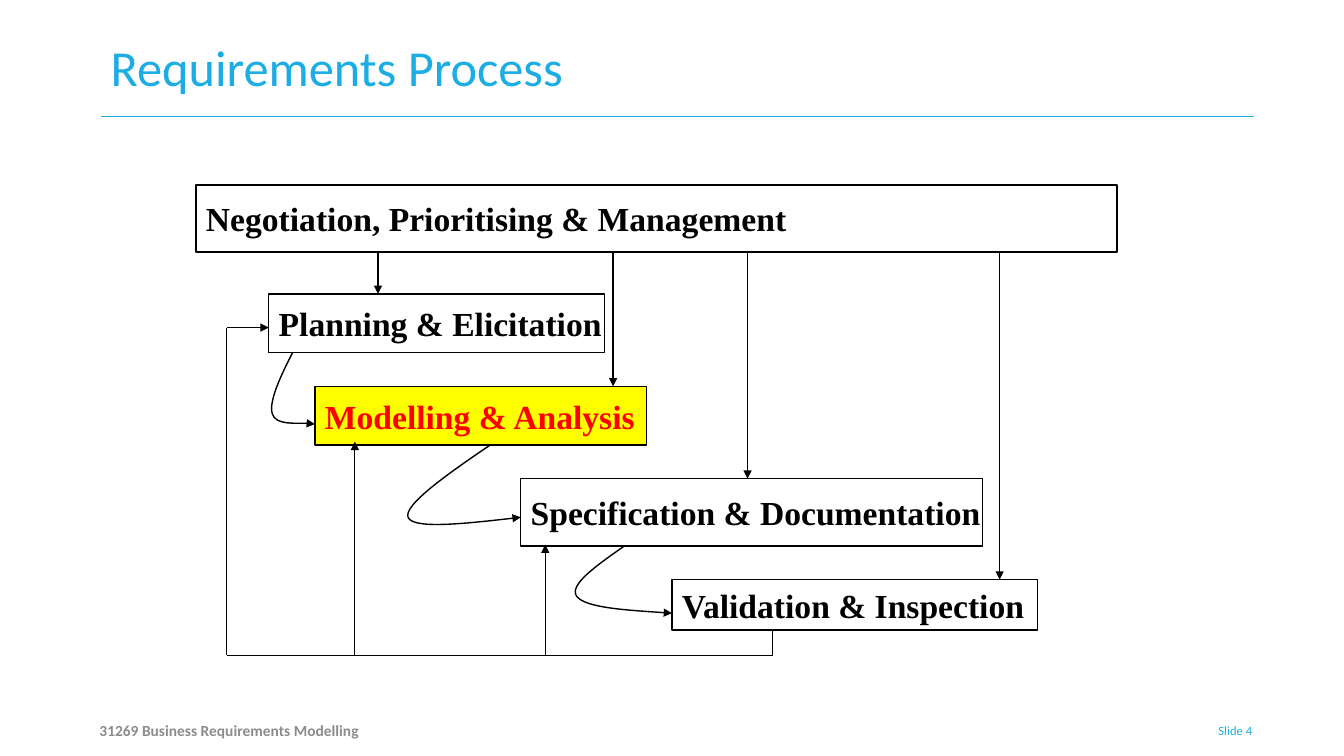
from itertools import pairwise

from lxml import etree
from pptx import Presentation
from pptx.dml.color import RGBColor
from pptx.enum.shapes import MSO_CONNECTOR, MSO_SHAPE
from pptx.enum.text import MSO_ANCHOR, PP_ALIGN
from pptx.oxml.ns import qn
from pptx.util import Pt

STRAIGHT = MSO_CONNECTOR.STRAIGHT
RECTANGLE = MSO_SHAPE.RECTANGLE
TOP, MIDDLE = MSO_ANCHOR.TOP, MSO_ANCHOR.MIDDLE
LEFT, RIGHT = PP_ALIGN.LEFT, PP_ALIGN.RIGHT

BLACK, WHITE, BLUE, GREY = "000000", "FFFFFF", "1CADE4", "8C8C8C"
YELLOW, RED = "FFFF00", "FF0000"

TITLE_FONT = {"name": "Calibri", "size": Pt(36), "bold": False}
FOOTER_FONT = {"name": "Calibri", "size": Pt(11), "bold": True}
NUMBER_FONT = {"name": "Calibri", "size": Pt(9), "bold": False}
STAGE_FONT = {"name": "Times New Roman", "size": Pt(24), "bold": True}

MANAGEMENT = ("Negotiation, Prioritising & Management", (0, 0, 658, 48), WHITE, BLACK)
STAGES = [
    ("Planning & Elicitation", (52, 78, 240, 42), WHITE, BLACK, 130),
    ("Modelling & Analysis", (85, 144, 237, 42), YELLOW, RED, 298),
    ("Specification & Documentation", (232, 210, 330, 48), WHITE, BLACK, 394),
    ("Validation & Inspection", (340, 282, 261, 36), WHITE, BLACK, 574),
]
HANDOVERS = [
    [(69, 120), (60, 137.5), (52, 155), (54.5, 163.5), (57, 172), (80, 169.5), (85, 171)],
    [(210, 186), (179, 207), (148, 229), (151.5, 237.5), (155, 246), (193.5, 242), (232, 237.5)],
    [(306, 258), (286, 272), (266, 286), (272, 294), (278, 302), (309, 304), (340, 306)],
]
FEEDBACK = [(412, 318), (412, 336), (22, 336), (22, 102), (52, 102)]
FEEDBACK_BRANCHES = [(249.5, 257), (113.5, 183.5)]


def rgb(value):
    """Turn a hex string into a colour."""
    return RGBColor.from_string(value)


def write(shape, text, font, color, anchor, align=LEFT, wrap=True):
    """Put one formatted line of text into a shape."""
    frame = shape.text_frame
    frame.word_wrap = wrap
    frame.vertical_anchor = anchor
    para = frame.paragraphs[0]
    para.alignment = align
    span = para.add_run()
    span.text = text
    for name, value in font.items():
        setattr(span.font, name, value)
    span.font.color.rgb = rgb(color)


def add_label(page, box, *content):
    """Add a text box that fills the given box."""
    write(page.shapes.add_textbox(*map(Pt, box)), *content)


def add_arrowhead(shape):
    """End the outline of a shape with a triangle."""
    head = etree.SubElement(shape.line._get_or_add_ln(), qn("a:tailEnd"))
    head.set("type", "triangle")


def add_line(page, start, end, color=BLACK, width=1, arrow=False):
    """Draw a straight line, with an arrowhead if asked."""
    line = page.shapes.add_connector(STRAIGHT, *map(Pt, (*start, *end)))
    line.line.color.rgb = rgb(color)
    line.line.width = Pt(width)
    if arrow:
        add_arrowhead(line)
    etree.SubElement(line._element.spPr, qn("a:effectLst"))


def add_curve(page, points):
    """Draw an arrow along cubic curves through the given control points."""
    start, *controls = [(Pt(x), Pt(y)) for x, y in points]
    builder = page.shapes.build_freeform(*start)
    builder.add_line_segments(controls, close=False)
    curve = builder.convert_to_shape()
    segments = list(curve._element.iter(qn("a:lnTo")))
    for first in range(0, len(segments), 3):
        bend = etree.Element(qn("a:cubicBezTo"))
        segments[first].addprevious(bend)
        for segment in segments[first:first + 3]:
            bend.append(segment[0])
            segment.getparent().remove(segment)
    curve.shadow.inherit = False
    curve.fill.background()
    curve.line.color.rgb = rgb(BLACK)
    curve.line.width = Pt(1)
    add_arrowhead(curve)


def add_stage(page, box, text, fill, color):
    """Draw one outlined process box."""
    stage = page.shapes.add_shape(RECTANGLE, *map(Pt, box))
    stage.shadow.inherit = False
    stage.fill.solid()
    stage.fill.fore_color.rgb = rgb(fill)
    stage.line.color.rgb = rgb(BLACK)
    stage.line.width = Pt(1)
    write(stage, text, STAGE_FONT, color, MIDDLE, LEFT, False)


def draw_header(page, box):
    """Place the title and the rule below it."""
    left, top, width, height = box
    add_line(page, (left, top + height), (left + width, top + height), BLUE)
    add_label(page, (left, top, 655, 72), "Requirements Process", TITLE_FONT, BLUE, TOP)


def draw_process(page, box):
    """Place the process boxes and the arrows between them."""
    left, top = box[:2]

    def at(point):
        """Move a point into the box."""
        return left + point[0], top + point[1]

    for text, (x, y, width, height), fill, color, *_ in [*STAGES, MANAGEMENT]:
        add_stage(page, (*at((x, y)), width, height), text, fill, color)
    for points in HANDOVERS:
        add_curve(page, [at(point) for point in points])
    management_bottom = MANAGEMENT[1][3]
    for _, stage_box, _, _, x in STAGES:
        add_line(page, at((x, management_bottom)), at((x, stage_box[1])), arrow=True)
    for start, end in pairwise(FEEDBACK):
        add_line(page, at(start), at(end), arrow=end == FEEDBACK[-1])
    for x, y in FEEDBACK_BRANCHES:
        add_line(page, at((x, 336.5)), at((x, y)), width=0.75, arrow=True)


def draw_footer(page, box):
    """Place the course name and the slide number."""
    left, top, width, height = box
    add_label(page, (left, top, 485, height), "31269 Business Requirements Modelling",
              FOOTER_FONT, GREY, MIDDLE)
    add_label(page, (left + width - 66, top, 66, height), "Slide 4",
              NUMBER_FONT, BLUE, MIDDLE, RIGHT)


def main():
    """Build the slide and save the deck."""
    deck = Presentation()
    deck.slide_width, deck.slide_height = Pt(960), Pt(540)
    page = deck.slides.add_slide(deck.slide_layouts[6])
    draw_header(page, (72, 22.5, 824, 60.5))
    draw_process(page, (140, 132, 658, 336))
    draw_footer(page, (64, 507.5, 837.5, 29))
    deck.save("out.pptx")


if __name__ == "__main__":
    main()
